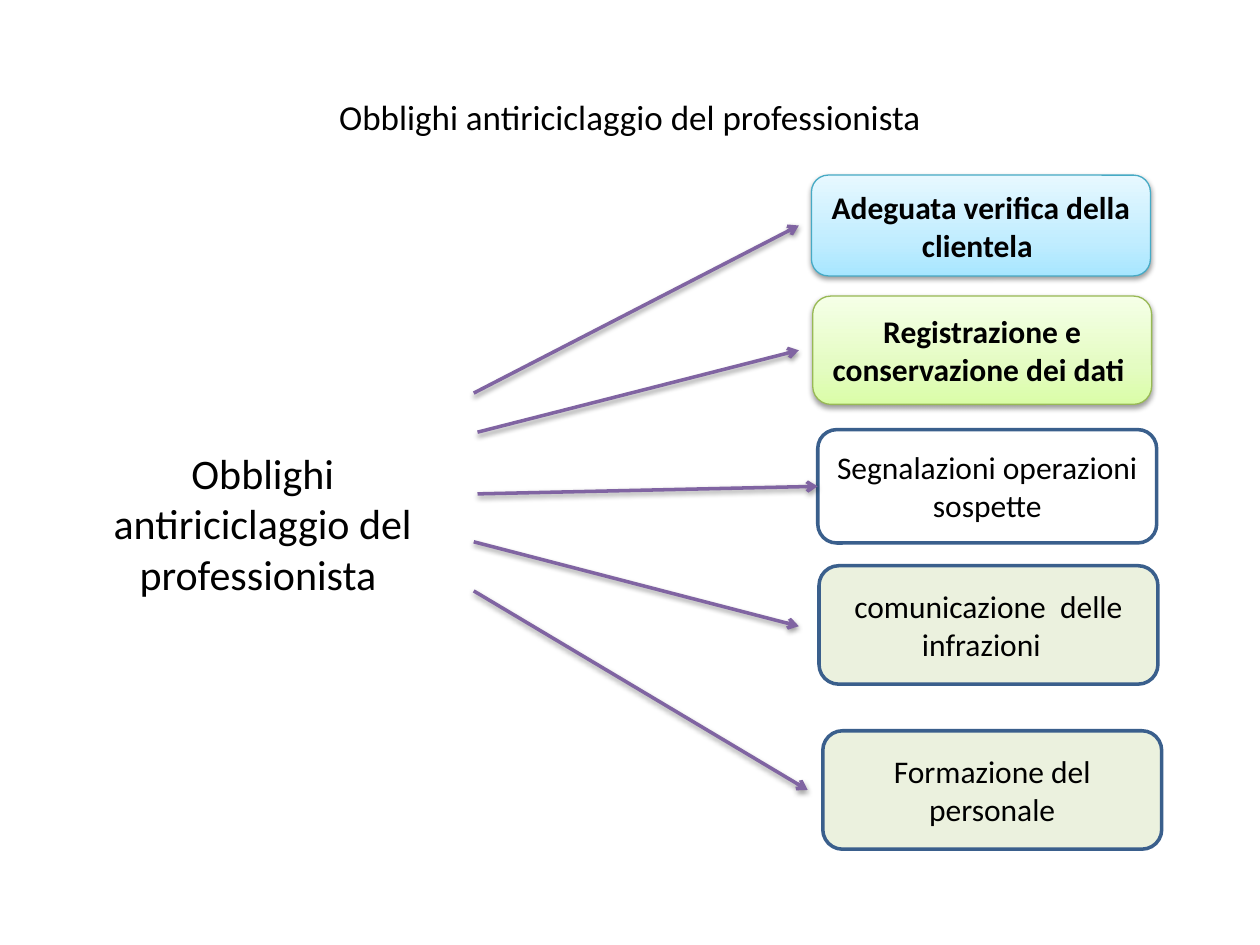
from copy import deepcopy

from lxml import etree
from pptx import Presentation
from pptx.dml.color import RGBColor as Rgb
from pptx.enum.shapes import MSO_CONNECTOR as Link, MSO_SHAPE as Shape
from pptx.enum.text import MSO_ANCHOR as Anchor, PP_ALIGN as Align
from pptx.oxml import parse_xml
from pptx.oxml.ns import nsdecls, qn
from pptx.util import Inches, Pt

BLACK = Rgb(0, 0, 0)
PURPLE = Rgb(0x80, 0x64, 0xA2)
NAVY = Rgb(0x3A, 0x5F, 0x8C)
TEAL = Rgb(0x46, 0xAA, 0xC5)
GREEN = Rgb(0x98, 0xB9, 0x55)
PALE = Rgb(0xEB, 0xF1, 0xDE)
BLUES = [Rgb(0xA7, 0xE6, 0xFF), Rgb(0xC1, 0xED, 0xFF), Rgb(0xE7, 0xF8, 0xFF)]
LIMES = [Rgb(0xDA, 0xFD, 0xA7), Rgb(0xE4, 0xFC, 0xC2), Rgb(0xF5, 0xFF, 0xE7)]
STOPS = [0, 0.35, 1]
WIDTH = 2.69

TITLE = "Obblighi antiriciclaggio del professionista"
DUTIES = [
    dict(text="Adeguata verifica della clientela ", box=(6.44, 1.39, WIDTH, 0.8),
         fill=BLUES, edge=TEAL, start=(3.76, 3.12), end=(6.34, 1.79)),
    dict(text="Registrazione e conservazione dei dati ", box=(6.45, 2.35, WIDTH, 0.86),
         fill=LIMES, edge=GREEN, start=(3.79, 3.43), end=(6.34, 2.78)),
    dict(text="Segnalazioni operazioni sospette", box=(6.49, 3.41, WIDTH, 0.9),
         fill=None, edge=NAVY, start=(3.79, 3.92), end=None),
    dict(text="comunicazione  delle infrazioni  ", box=(6.5, 4.49, WIDTH, 0.94),
         fill=PALE, edge=NAVY, start=(3.76, 4.3), end=(6.34, 4.97)),
    dict(text="Formazione del personale", box=(6.53, 5.8, WIDTH, 0.94),
         fill=PALE, edge=NAVY, start=(3.76, 4.69), end=(6.41, 6.27)),
]


def write(frame, text, size=18, bold=False, anchor=Anchor.MIDDLE):
    frame.word_wrap = True
    frame.vertical_anchor = anchor
    para = frame.paragraphs[0]
    para.alignment = Align.CENTER
    run = para.add_run()
    run.text = text
    font = run.font
    font.name, font.size, font.bold = "Calibri", Pt(size), bold
    font.color.rgb = BLACK


def place(shape, box):
    shape.left, shape.top, shape.width, shape.height = map(Inches, box)


def shade(props):
    props.append(parse_xml(
        f'<a:effectLst {nsdecls("a")}>'
        f'<a:outerShdw blurRad="{Pt(3.1)}" dist="{Pt(1.6)}" dir="5400000" rotWithShape="0">'
        '<a:srgbClr val="000000"><a:alpha val="38000"/></a:srgbClr>'
        '</a:outerShdw></a:effectLst>'))


def blend(shape, tones):
    fill = shape.fill
    fill.gradient()
    fill.gradient_angle = 90
    stops = next(shape.element.spPr.iter(qn("a:gsLst")))
    stops.append(deepcopy(stops[0]))
    for stop, spot, tone in zip(fill.gradient_stops, STOPS, tones):
        stop.position = spot
        stop.color.rgb = tone


def add_title(slide, box):
    title = slide.shapes.title
    place(title, box)
    write(title.text_frame, TITLE, size=20)


def add_topic(slide, box):
    topic = slide.shapes.add_textbox(*map(Inches, box))
    write(topic.text_frame, TITLE + " ", size=24, anchor=Anchor.TOP)


def add_duty(slide, text, box, fill, edge):
    card = slide.shapes.add_shape(Shape.ROUNDED_RECTANGLE, *map(Inches, box))
    glossy = isinstance(fill, list)
    if glossy:
        blend(card, fill)
    elif fill is None:
        card.fill.background()
    else:
        card.fill.solid()
        card.fill.fore_color.rgb = fill
    card.line.color.rgb = edge
    card.line.width = Pt(0.75 if glossy else 2)
    if glossy:
        shade(card.element.spPr)
    else:
        card.shadow.inherit = False
    write(card.text_frame, text, bold=glossy)
    return card


def add_arrow(slide, card, start, end):
    goal = end or start
    arrow = slide.shapes.add_connector(Link.STRAIGHT, *map(Inches, start + goal))
    if end is None:
        arrow.end_connect(card, 1)
    arrow.line.color.rgb = PURPLE
    arrow.line.width = Pt(2)
    props = arrow.element.spPr
    etree.SubElement(props.find(qn("a:ln")), qn("a:tailEnd"), type="arrow")
    shade(props)


def main():
    deck = Presentation()
    deck.slide_width, deck.slide_height = Inches(10), Inches(7.5)
    slide = deck.slides.add_slide(deck.slide_layouts[5])
    add_title(slide, (0.5, 0.3, 9, 1.25))
    add_topic(slide, (0.59, 3.5, 2.99, 1.31))
    for duty in DUTIES:
        card = add_duty(slide, duty["text"], duty["box"], duty["fill"], duty["edge"])
        add_arrow(slide, card, duty["start"], duty["end"])
    deck.save("out.pptx")


if __name__ == "__main__":
    main()
